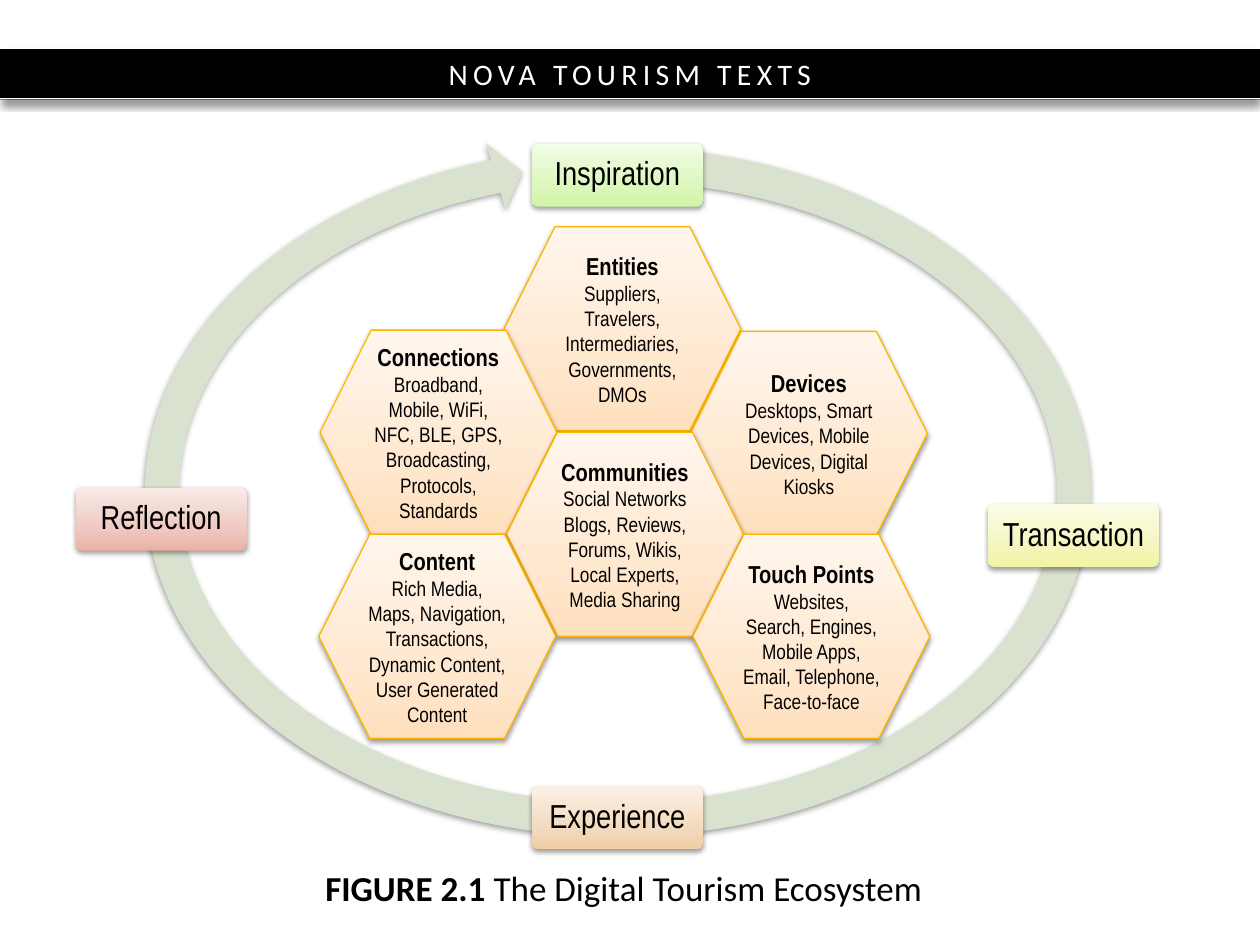
from copy import deepcopy

from lxml import etree
from pptx import Presentation
from pptx.dml.color import RGBColor
from pptx.enum.shapes import MSO_CONNECTOR, MSO_SHAPE
from pptx.enum.text import MSO_ANCHOR, PP_ALIGN
from pptx.oxml.ns import qn
from pptx.util import Inches, Pt

RECTANGLE = MSO_SHAPE.RECTANGLE
ROUNDED = MSO_SHAPE.ROUNDED_RECTANGLE
HEXAGON = MSO_SHAPE.HEXAGON
CIRCULAR_ARROW = MSO_SHAPE.CIRCULAR_ARROW
STRAIGHT = MSO_CONNECTOR.STRAIGHT
MIDDLE = MSO_ANCHOR.MIDDLE
CENTER = PP_ALIGN.CENTER

BLACK = RGBColor(0x00, 0x00, 0x00)
WHITE = RGBColor(0xFF, 0xFF, 0xFF)
SAGE = RGBColor(0xD9, 0xE2, 0xCE)
AMBER = RGBColor(0xFE, 0xB6, 0x04)
PEACH = [RGBColor(0xFF, 0xDF, 0xBC), RGBColor(0xFF, 0xE8, 0xD0), RGBColor(0xFF, 0xF6, 0xED)]
GREEN = [RGBColor(0xD0, 0xF5, 0xA3), RGBColor(0xDD, 0xF7, 0xBF), RGBColor(0xF2, 0xFD, 0xE6)]
YELLOW = [RGBColor(0xF1, 0xF4, 0xA2), RGBColor(0xF4, 0xF6, 0xBF), RGBColor(0xFC, 0xFC, 0xE6)]
ORANGE = [RGBColor(0xF0, 0xCD, 0xA3), RGBColor(0xF3, 0xDB, 0xC0), RGBColor(0xFB, 0xF1, 0xE6)]
RED = [RGBColor(0xEA, 0xB1, 0xA6), RGBColor(0xEF, 0xC9, 0xC2), RGBColor(0xFA, 0xEA, 0xE7)]
GRADIENT_POSITIONS = (0, 0.35, 1)

NARROW = "Arial Narrow"
SANS = "Calibri"

STAGE_SIZE = (1.36, 0.5)
STAGES = [
    ("Inspiration", 4.22, 1.14, GREEN),
    ("Transaction", 7.84, 4, YELLOW),
    ("Experience", 4.22, 6.24, ORANGE),
    ("Reflection", 0.6, 3.87, RED),
]

CELL_SIZE = (1.88, 1.62)
CELLS = [
    ("Entities", "Suppliers, Travelers, Intermediaries, Governments, DMOs", 4, 1.8),
    ("Connections", "Broadband, Mobile, WiFi, NFC, BLE, GPS, Broadcasting, Protocols, Standards",
     2.54, 2.62),
    ("Devices", "Desktops, Smart Devices, Mobile Devices, Digital Kiosks", 5.48, 2.63),
    ("Communities", "Social Networks Blogs, Reviews, Forums, Wikis, Local Experts, Media Sharing",
     4.02, 3.43),
    ("Touch Points", "Websites, Search, Engines, Mobile Apps, Email, Telephone, Face-to-face",
     5.5, 4.24),
    ("Content", "Rich Media, Maps, Navigation, Transactions, Dynamic Content, User Generated Content",
     2.53, 4.24),
]


def add_text(paragraph, text, font=NARROW, size=12, color=BLACK, bold=False, tracking=0):
    """Append a formatted run to a centred paragraph."""
    paragraph.alignment = CENTER
    run = paragraph.add_run()
    run.text = text
    run.font.name = font
    run.font.size = Pt(size)
    run.font.color.rgb = color
    run.font.bold = bold
    if tracking:
        run.font._element.set("spc", str(tracking * 100))


def set_gradient(shape, colors):
    """Fill a shape with a three-stop gradient rising from the bottom."""
    shape.fill.gradient()
    shape.fill.gradient_angle = 90
    stop_list = shape._element.spPr.find(".//" + qn("a:gsLst"))
    stop_list.append(deepcopy(stop_list[-1]))
    for stop, position, color in zip(shape.fill.gradient_stops, GRADIENT_POSITIONS, colors):
        stop.position = position
        stop.color.rgb = color


def set_shadow(shape, opacity=38, blur=3.1, distance=1.6):
    """Give a shape a soft black shadow that falls straight down."""
    shape.shadow.inherit = False
    effects = shape._element.spPr.find(qn("a:effectLst"))
    shadow = etree.SubElement(effects, qn("a:outerShdw"), blurRad=str(Pt(blur)),
                              dist=str(Pt(distance)), dir="5400000", rotWithShape="0")
    color = etree.SubElement(shadow, qn("a:srgbClr"), val=str(BLACK))
    etree.SubElement(color, qn("a:alpha"), val=str(opacity * 1000))


def add_panel(slide, kind, left, top, width, height, fill, line=None, **shadow):
    """Add a shadowed shape with a plain or gradient fill."""
    shape = slide.shapes.add_shape(kind, Inches(left), Inches(top), Inches(width), Inches(height))
    if isinstance(fill, list):
        set_gradient(shape, fill)
    else:
        shape.fill.solid()
        shape.fill.fore_color.rgb = fill
    if line is None:
        shape.line.fill.background()
    else:
        shape.line.color.rgb = line
        shape.line.width = Pt(0.75)
    set_shadow(shape, **shadow)
    shape.text_frame.word_wrap = True
    shape.text_frame.vertical_anchor = MIDDLE
    return shape


def add_rule(slide, top):
    """Add a thin white line across the slide."""
    rule = slide.shapes.add_connector(STRAIGHT, 0, Inches(top), Inches(10), Inches(top))
    rule.line.color.rgb = WHITE
    rule.line.width = Pt(0.75)
    etree.SubElement(rule._element.spPr, qn("a:effectLst"))


def add_banner(slide):
    """Add the black series banner with its white edges."""
    banner = add_panel(slide, RECTANGLE, 0, 0.38, 10, 0.41, BLACK,
                       opacity=40, blur=4, distance=3)
    add_text(banner.text_frame.paragraphs[0], "NOVA TOURISM TEXTS",
             font=SANS, size=17, color=WHITE, tracking=3)
    for top in (0.38, 0.78):
        add_rule(slide, top)


def add_cycle_arrow(slide):
    """Add the oval arrow that joins the stages."""
    arrow = add_panel(slide, CIRCULAR_ARROW, 1.01, 1.03, 7.79, 5.75, SAGE)
    for index, value in enumerate((0.047, 2.729, 149.287, 167.494, 0.048)):
        arrow.adjustments[index] = value


def add_stage(slide, name, left, top, colors):
    """Add one rounded stage label."""
    stage = add_panel(slide, ROUNDED, left, top, *STAGE_SIZE, colors)
    stage.adjustments[0] = 0.1
    frame = stage.text_frame
    frame.margin_left = frame.margin_right = Inches(0.05)
    paragraph = frame.paragraphs[0]
    paragraph.line_spacing = 0.9
    add_text(paragraph, name, size=19)


def add_cell(slide, heading, details, left, top):
    """Add one hexagon with a heading and its details."""
    cell = add_panel(slide, HEXAGON, left, top, *CELL_SIZE, PEACH, line=AMBER)
    add_text(cell.text_frame.paragraphs[0], heading, size=14, bold=True)
    add_text(cell.text_frame.add_paragraph(), details)


def add_caption(slide):
    """Add the figure caption."""
    caption = slide.shapes.add_textbox(Inches(0.67), Inches(6.75), Inches(8.56), Inches(0.48))
    frame = caption.text_frame
    frame.word_wrap = True
    frame.vertical_anchor = MIDDLE
    paragraph = frame.paragraphs[0]
    paragraph.line_spacing = Pt(32)
    add_text(paragraph, "FIGURE 2.1 ", font=SANS, size=20, bold=True)
    add_text(paragraph, "The Digital Tourism Ecosystem", font=SANS, size=20)


def main():
    """Build and save the slide."""
    presentation = Presentation()
    presentation.slide_width = Inches(10)
    presentation.slide_height = Inches(7.5)
    slide = presentation.slides.add_slide(presentation.slide_layouts[6])
    add_banner(slide)
    add_cycle_arrow(slide)
    for stage in STAGES:
        add_stage(slide, *stage)
    add_caption(slide)
    for cell in CELLS:
        add_cell(slide, *cell)
    presentation.save("out.pptx")


if __name__ == "__main__":
    main()
